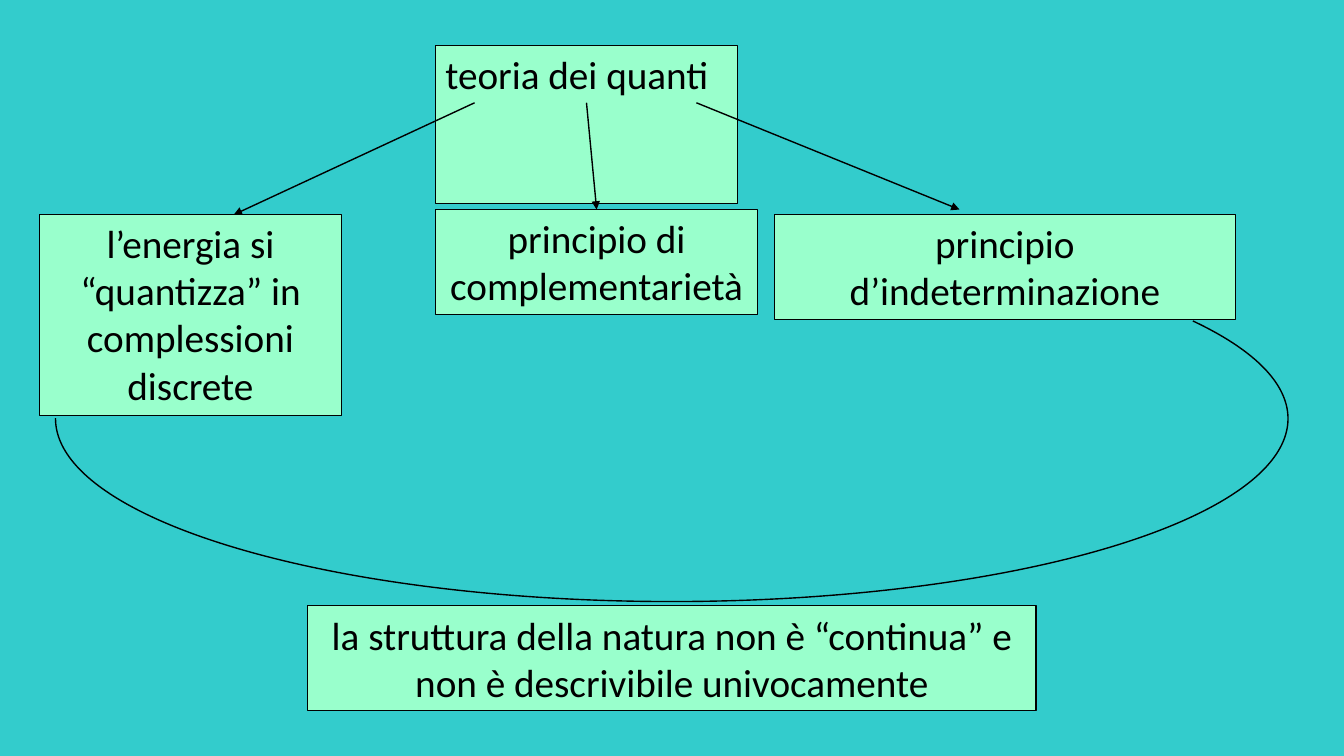
"""Concept map of quantum theory: three principles and their shared conclusion."""
from dataclasses import dataclass

from lxml.etree import SubElement
from pptx import Presentation
from pptx.dml.color import RGBColor
from pptx.enum.shapes import MSO_CONNECTOR as Connector, MSO_SHAPE as Shape
from pptx.enum.text import MSO_ANCHOR as Anchor, MSO_AUTO_SIZE as AutoSize, PP_ALIGN as Align
from pptx.oxml.ns import qn
from pptx.util import Cm, Pt


@dataclass(frozen=True)
class Theme:
    background: RGBColor = RGBColor.from_string("33CCCC")
    box: RGBColor = RGBColor.from_string("99FFCC")
    ink: RGBColor = RGBColor.from_string("000000")
    font: str = "Calibri"
    size: Pt = Pt(28)
    border: Pt = Pt(0.75)
    stroke: Pt = Pt(1)


theme = Theme()


def style_box(box, text, align):
    box.fill.solid()
    box.fill.fore_color.rgb = theme.box
    box.line.color.rgb = theme.ink
    box.line.width = theme.border
    frame = box.text_frame
    frame.text = text
    frame.word_wrap = True
    frame.auto_size = AutoSize.SHAPE_TO_FIT_TEXT
    frame.vertical_anchor = Anchor.TOP
    paragraph = frame.paragraphs[0]
    paragraph.alignment = align
    paragraph.font.name = theme.font
    paragraph.font.size = theme.size
    paragraph.font.color.rgb = theme.ink


def add_arrow(start_x, start_y, end_x, end_y):
    arrow = slide.shapes.add_connector(
        Connector.STRAIGHT, Cm(start_x), Cm(start_y), Cm(end_x), Cm(end_y))
    arrow.line.color.rgb = theme.ink
    arrow.line.width = theme.stroke
    SubElement(arrow.line._get_or_add_ln(), qn("a:tailEnd"), type="triangle")
    SubElement(arrow._element.spPr, qn("a:effectLst"))
    return arrow


deck = Presentation()
deck.slide_width, deck.slide_height = Cm(33.87), Cm(19.05)
slide = deck.slides.add_slide(deck.slide_layouts.get_by_name("Title Only"))
slide.background.fill.solid()
slide.background.fill.fore_color.rgb = theme.background

theory = slide.shapes.title
theory.left, theory.top, theory.width, theory.height = Cm(10.97), Cm(1.14), Cm(7.62), Cm(1.45)
style_box(theory, "teoria dei quanti", Align.LEFT)

statements = [
    ("l’energia si “quantizza” in complessioni discrete", 0.99, 5.41, 7.62, 5.05),
    ("principio di complementarietà", 10.97, 5.28, 8.13, 2.64),
    ("principio d’indeterminazione", 19.51, 5.41, 11.63, 2.64),
    ("la struttura della natura non è “continua” e non è descrivibile univocamente",
     7.75, 15.27, 18.36, 2.64),
]
boxes = []
for text, *place in statements:
    statement = slide.shapes.add_textbox(*map(Cm, place))
    style_box(statement, text, Align.CENTER)
    boxes.append(statement)
energy, complementarity, uncertainty, conclusion = boxes

add_arrow(11.96, 2.59, 5.89, 5.41)
to_complementarity = add_arrow(14.78, 2.59, 15.04, 5.28)
to_complementarity.begin_connect(theory, 2)
to_complementarity.end_connect(complementarity, 0)
add_arrow(17.55, 2.59, 24.18, 5.28)

synthesis = slide.shapes.add_shape(Shape.ARC, Cm(1.4), Cm(5.94), Cm(31.06), Cm(9.22))
synthesis.adjustments[0] = 209.63
synthesis.adjustments[1] = 108.02
synthesis.shadow.inherit = False
synthesis.fill.background()
synthesis.line.color.rgb = theme.ink
synthesis.line.width = theme.stroke

deck.save("out.pptx")
